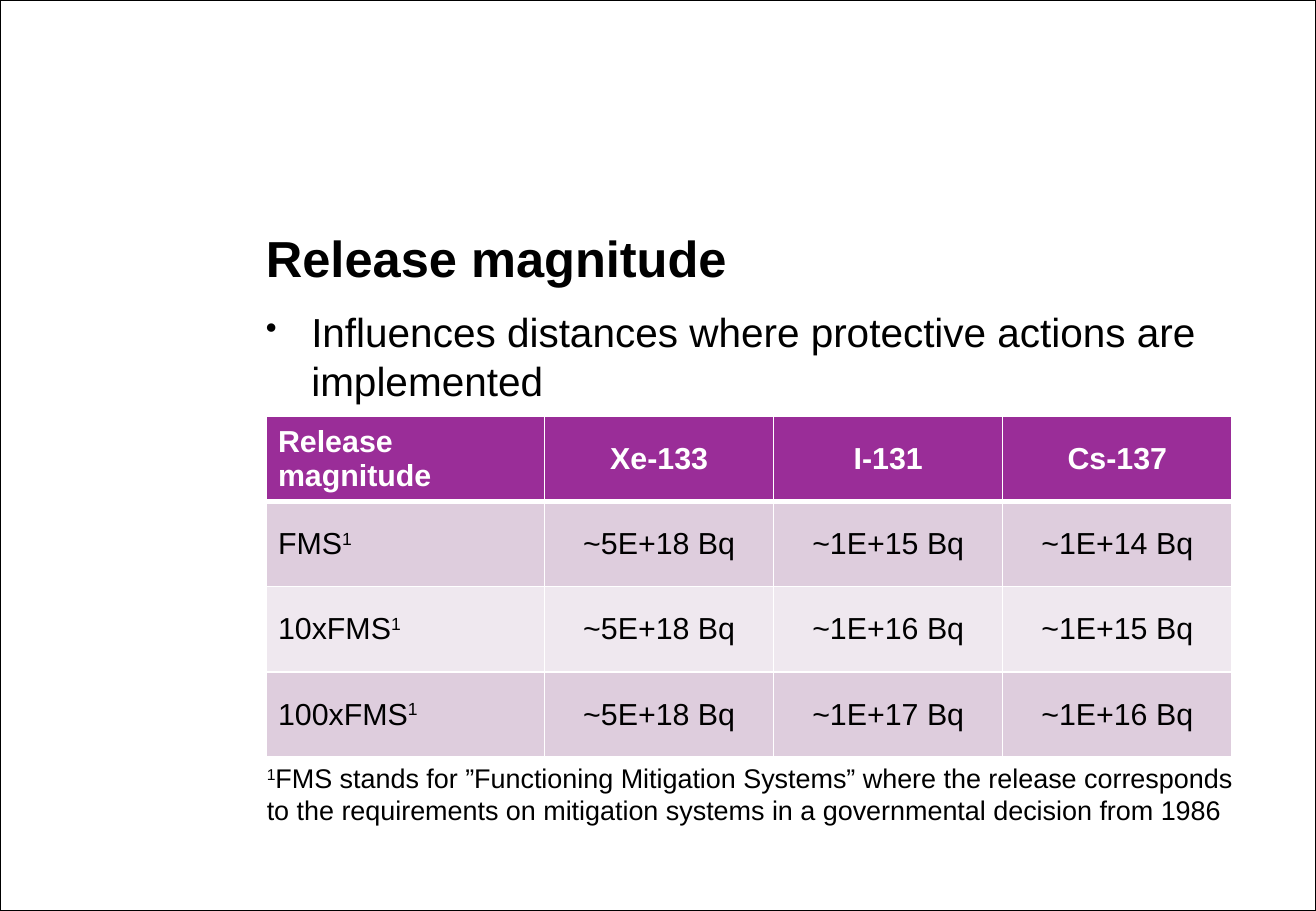
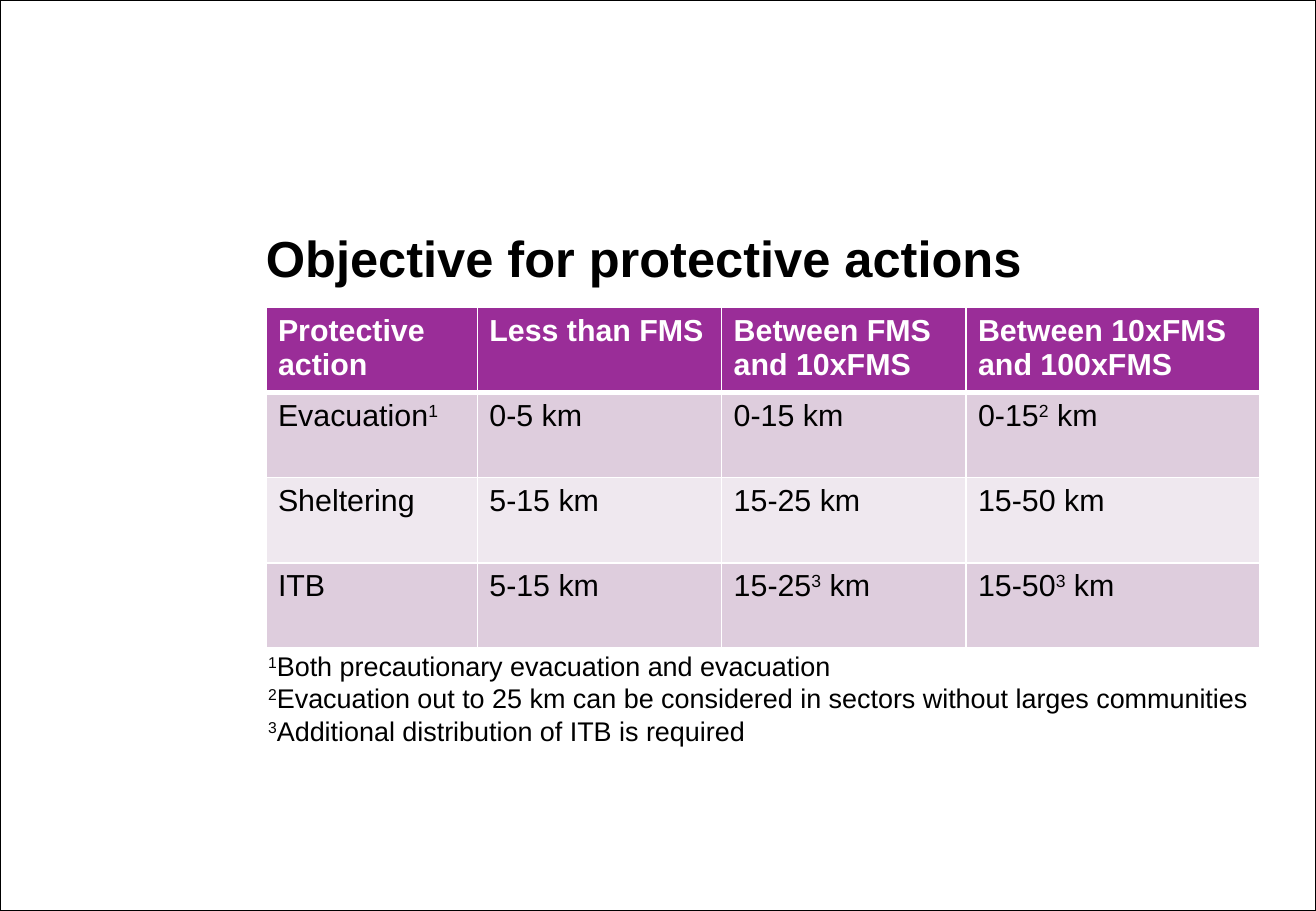
from lxml import etree
from pptx import Presentation
from pptx import util as u
from pptx.dml.color import RGBColor
from pptx.enum import shapes, text
from pptx.oxml import ns

BLACK = RGBColor(0x00, 0x00, 0x00)
WHITE = RGBColor(0xFF, 0xFF, 0xFF)
PURPLE = RGBColor(0x9A, 0x2D, 0x98)
BANDS = (RGBColor(0xDE, 0xCD, 0xDD), RGBColor(0xEF, 0xE8, 0xEF))
FONT = "Arial"
PAGE_SIZE = (u.Cm(27.52), u.Cm(19.05))
LEFT = u.Cm(5.56)
BODY_TOP = u.Cm(6.43)
BODY_WIDTH = u.Cm(19.74)
ROW_HEIGHT = u.Cm(1.78)
LEFT_ALIGN, CENTER = text.PP_ALIGN.LEFT, text.PP_ALIGN.CENTER
TOP, MIDDLE, BOTTOM = text.MSO_ANCHOR.TOP, text.MSO_ANCHOR.MIDDLE, text.MSO_ANCHOR.BOTTOM


def write(para, words, size=18, bold=False, color=BLACK, align=LEFT_ALIGN):
    """A caret raises the one character that follows it."""
    para.alignment = align
    first, *marked = words.split("^")
    pieces = [(first, False)]
    for piece in marked:
        pieces += [(piece[0], True), (piece[1:], False)]
    for piece, raised in pieces:
        if not piece:
            continue
        span = para.add_run()
        span.text = piece
        span.font.name, span.font.size = FONT, u.Pt(size)
        span.font.bold = bold
        span.font.color.rgb = color
        if raised:
            span._r.get_or_add_rPr().set("baseline", "30000")


def add_text_frame(page, left, top, width, height, anchor=TOP, inset=True):
    frame = page.shapes.add_textbox(left, top, width, height).text_frame
    frame.word_wrap = True
    frame.vertical_anchor = anchor
    if not inset:
        frame.margin_left = frame.margin_right = 0
        frame.margin_top = frame.margin_bottom = 0
    return frame


def add_page(deck, title):
    page = deck.slides.add_slide(deck.slide_layouts[6])
    border = page.shapes.add_shape(shapes.MSO_SHAPE.RECTANGLE, 0, 0, *PAGE_SIZE)
    border.shadow.inherit = False
    border.fill.background()
    border.line.color.rgb = BLACK
    border.line.width = u.Pt(0.75)
    frame = add_text_frame(page, LEFT, u.Cm(3.63), BODY_WIDTH, u.Cm(2.39), BOTTOM, inset=False)
    write(frame.paragraphs[0], title, size=30, bold=True)
    return page


def add_bullet(page, words):
    frame = add_text_frame(page, LEFT, BODY_TOP, BODY_WIDTH, u.Cm(2.2), inset=False)
    para = frame.paragraphs[0]
    props = para._p.get_or_add_pPr()
    indent = u.Cm(0.95)
    props.set("marL", str(indent))
    props.set("indent", str(-indent))
    etree.SubElement(props, ns.qn("a:buSzPct"), val="80000")
    etree.SubElement(props, ns.qn("a:buChar"), char="•")
    write(para, words, size=24)


def set_borders(cell, widths):
    props = cell._tc.get_or_add_tcPr()
    for side, width in zip("LRTB", widths):
        line = etree.SubElement(props, ns.qn("a:ln" + side), w=str(u.Pt(width)))
        fill = etree.SubElement(line, ns.qn("a:solidFill"))
        etree.SubElement(fill, ns.qn("a:srgbClr"), val=str(WHITE))


def add_grid(page, top, widths, rows, anchor=TOP, value_align=LEFT_ALIGN):
    table = page.shapes.add_table(
        len(rows), len(widths), LEFT, top, u.Cm(sum(widths)), ROW_HEIGHT * len(rows)
    ).table
    table.horz_banding = False
    for column, width in zip(table.columns, widths):
        column.width = u.Cm(width)
    for r, row in enumerate(rows):
        table.rows[r].height = ROW_HEIGHT
        header = r == 0
        for c, words in enumerate(row):
            cell = table.cell(r, c)
            set_borders(cell, (1, 1, 3 if r == 1 else 1, 3 if header else 1))
            cell.fill.solid()
            cell.fill.fore_color.rgb = PURPLE if header else BANDS[(r - 1) % 2]
            cell.vertical_anchor = anchor
            write(cell.text_frame.paragraphs[0], words, bold=header,
                  color=WHITE if header else BLACK,
                  align=value_align if c else LEFT_ALIGN)


def add_notes(page, left, top, width, notes):
    frame = add_text_frame(page, left, top, width, u.Cm(2.31))
    frame.auto_size = text.MSO_AUTO_SIZE.SHAPE_TO_FIT_TEXT
    for i, note in enumerate(notes):
        para = frame.add_paragraph() if i else frame.paragraphs[0]
        write(para, note, size=16)


def build_magnitude(deck):
    page = add_page(deck, "Release magnitude")
    add_bullet(page, "Influences distances where protective actions are implemented")
    add_grid(page, u.Cm(8.71), (5.83, 4.79, 4.79, 4.79), (
        ("Release magnitude", "Xe-133", "I-131", "Cs-137"),
        ("FMS^1", "~5E+18 Bq", "~1E+15 Bq", "~1E+14 Bq"),
        ("10xFMS^1", "~5E+18 Bq", "~1E+16 Bq", "~1E+15 Bq"),
        ("100xFMS^1", "~5E+18 Bq", "~1E+17 Bq", "~1E+16 Bq"),
    ), MIDDLE, CENTER)
    add_notes(page, u.Cm(5.33), u.Cm(15.8), u.Cm(21.03), (
        "^1FMS stands for ”Functioning Mitigation Systems” where the release corresponds "
        "to the requirements on mitigation systems in a governmental decision from 1986",
    ))


def build_objective(deck):
    page = add_page(deck, "Objective for protective actions")
    add_grid(page, BODY_TOP, (4.42, 5.11, 5.11, 6.15), (
        ("Protective action", "Less than FMS", "Between FMS and 10xFMS", "Between 10xFMS and 100xFMS"),
        ("Evacuation^1", "0-5 km", "0-15 km", "0-15^2 km"),
        ("Sheltering", "5-15 km", "15-25 km", "15-50 km"),
        ("ITB", "5-15 km", "15-25^3 km", "15-50^3 km"),
    ))
    add_notes(page, u.Cm(5.36), u.Cm(13.46), u.Cm(21.44), (
        "^1Both precautionary evacuation and evacuation",
        "^2Evacuation out to 25 km can be considered in sectors without larges communities",
        "^3Additional distribution of ITB is required",
    ))


def main():
    deck = Presentation()
    deck.slide_width, deck.slide_height = PAGE_SIZE
    build_magnitude(deck)
    build_objective(deck)
    deck.save("out.pptx")


if __name__ == "__main__":
    main()
